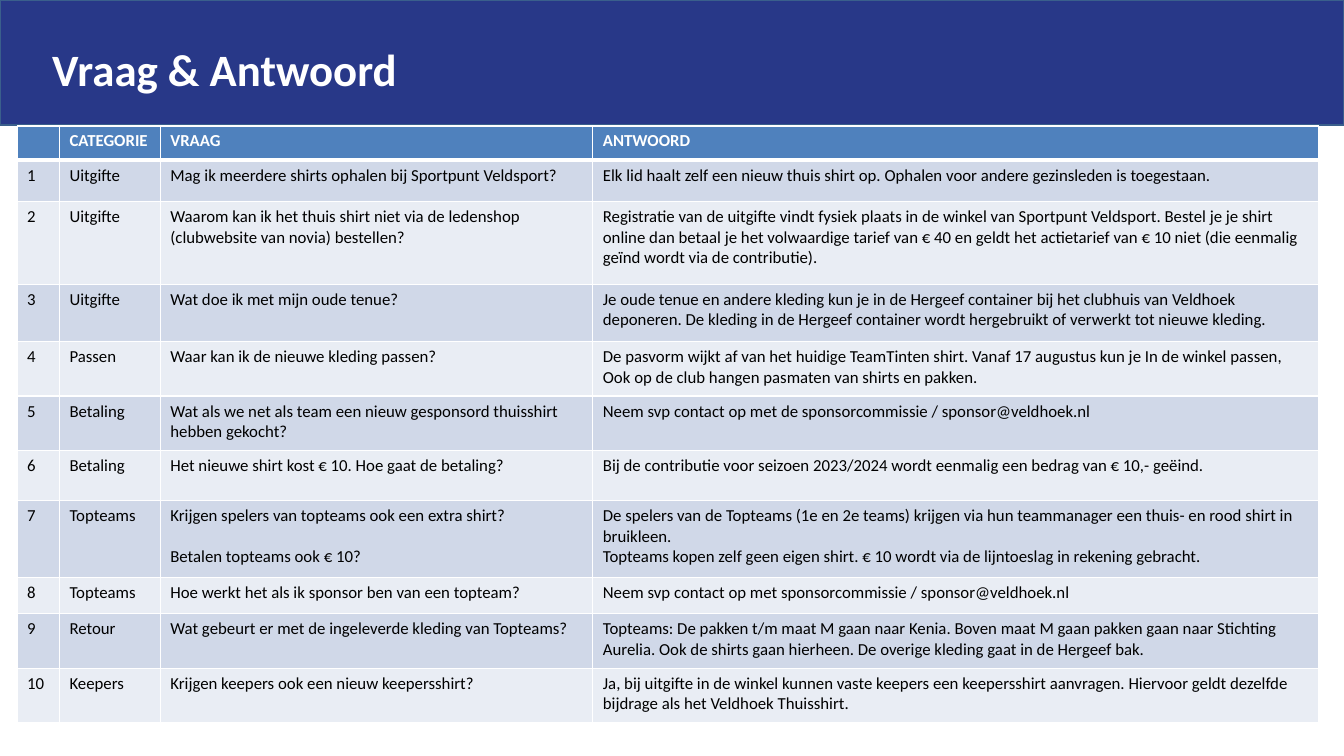
"""Build a slide with a title band and a table of questions and answers."""
from lxml.etree import SubElement
from pptx import Presentation
from pptx.dml.color import RGBColor
from pptx.enum.shapes import MSO_SHAPE
from pptx.enum.text import MSO_ANCHOR
from pptx.oxml.ns import qn
from pptx.util import Inches, Pt

NAVY = RGBColor(0x28, 0x38, 0x88)
EDGE = RGBColor(0x3A, 0x5F, 0x8C)
BLUE = RGBColor(0x4F, 0x81, 0xBD)
DARK = RGBColor(0xD0, 0xD8, 0xE8)
LIGHT = RGBColor(0xE9, 0xED, 0xF4)
WHITE = RGBColor(0xFF, 0xFF, 0xFF)
BLACK = RGBColor(0, 0, 0)
FONT = "Calibri"

WIDTHS = [0.42, 1, 4.29, 7.2]
HEIGHTS = [0.34, 0.41, 0.82, 0.57, 0.54, 0.54, 0.5, 0.76, 0.36, 0.54, 0.54]
HEAD = ("", "CATEGORIE", "VRAAG", "ANTWOORD")
ITEMS = [
    ("Uitgifte", "Mag ik meerdere shirts ophalen bij Sportpunt Veldsport?",
     "Elk lid haalt zelf een nieuw thuis shirt op. Ophalen voor andere "
     "gezinsleden is toegestaan."),
    ("Uitgifte", "Waarom kan ik het thuis shirt niet via de ledenshop "
     "(clubwebsite van novia) bestellen?",
     "Registratie van de uitgifte vindt fysiek plaats in de winkel van "
     "Sportpunt Veldsport. Bestel je je shirt online dan betaal je het "
     "volwaardige tarief van € 40 en geldt het actietarief van € 10 niet "
     "(die eenmalig geïnd wordt via de contributie)."),
    ("Uitgifte", "Wat doe ik met mijn oude tenue?",
     "Je oude tenue en andere kleding kun je in de Hergeef container bij "
     "het clubhuis van Veldhoek deponeren. De kleding in de Hergeef "
     "container wordt hergebruikt of verwerkt tot nieuwe kleding."),
    ("Passen", "Waar kan ik de nieuwe kleding passen?",
     "De pasvorm wijkt af van het huidige TeamTinten shirt. Vanaf 17 "
     "augustus kun je In de winkel passen, Ook op de club hangen pasmaten "
     "van shirts en pakken."),
    ("Betaling", "Wat als we net als team een nieuw gesponsord thuisshirt "
     "hebben gekocht?",
     "Neem svp contact op met de sponsorcommissie / sponsor@veldhoek.nl"),
    ("Betaling", "Het nieuwe shirt kost € 10. Hoe gaat de betaling?",
     "Bij de contributie voor seizoen 2023/2024 wordt eenmalig een bedrag "
     "van € 10,- geëind."),
    ("Topteams", "Krijgen spelers van topteams ook een extra shirt?\n"
     "Betalen topteams ook € 10?",
     "De spelers van de Topteams (1e en 2e teams) krijgen via hun "
     "teammanager een thuis- en rood shirt in bruikleen.\n"
     "Topteams kopen zelf geen eigen shirt. € 10 wordt via de lijntoeslag "
     "in rekening gebracht."),
    ("Topteams", "Hoe werkt het als ik sponsor ben van een topteam?",
     "Neem svp contact op met sponsorcommissie / sponsor@veldhoek.nl"),
    ("Retour", "Wat gebeurt er met de ingeleverde kleding van Topteams?",
     "Topteams: De pakken t/m maat M gaan naar Kenia. Boven maat M gaan "
     "pakken gaan naar Stichting Aurelia. Ook de shirts gaan hierheen. De "
     "overige kleding gaat in de Hergeef bak."),
    ("Keepers", "Krijgen keepers ook een nieuw keepersshirt?",
     "Ja, bij uitgifte in de winkel kunnen vaste keepers een keepersshirt "
     "aanvragen. Hiervoor geldt dezelfde bijdrage als het Veldhoek "
     "Thuisshirt."),
]


def style(frame, size, color, bold):
    """Format every run of a text frame."""
    for para in frame.paragraphs:
        for run in para.runs:
            font = run.font
            font.name, font.size, font.bold = FONT, Pt(size), bold
            font.color.rgb = color


def add_band(slide, left, top, width, height):
    """Draw the title band with its heading."""
    band = slide.shapes.add_shape(MSO_SHAPE.RECTANGLE, Inches(left),
                                  Inches(top), Inches(width), Inches(height))
    band.shadow.inherit = False
    band.fill.solid()
    band.fill.fore_color.rgb = NAVY
    band.line.color.rgb = EDGE
    band.line.width = Pt(2)
    title = slide.shapes.add_textbox(Inches(left + 0.42), Inches(top + 0.06),
                                     Inches(12), Inches(1.25))
    frame = title.text_frame
    frame.word_wrap = True
    frame.vertical_anchor = MSO_ANCHOR.MIDDLE
    frame.text = "Vraag & Antwoord"
    style(frame, 32, WHITE, True)


def set_edge(cell, side, width):
    """Give one side of a cell a white border."""
    props = cell._tc.get_or_add_tcPr()
    line = SubElement(props, qn(f"a:ln{side}"), w=str(Pt(width)))
    fill = SubElement(line, qn("a:solidFill"))
    SubElement(fill, qn("a:srgbClr"), val=str(WHITE))


def fill_cell(cell, text, row, col):
    """Write and format one cell according to its row and column."""
    for side in "LRTB":
        thick = (row, side) in ((0, "B"), (1, "T"))
        set_edge(cell, side, 3 if thick else 1)
    cell.fill.solid()
    cell.fill.fore_color.rgb = BLUE if row == 0 else DARK if row % 2 else LIGHT
    if not text:
        cell.margin_top = cell.margin_bottom = 0
        return
    frame = cell.text_frame
    frame.text = text
    style(frame, 12, BLACK if row else WHITE, row == 0)
    if col == 2:
        for para in frame.paragraphs[1:]:
            para.space_before = Pt(14.6)


def add_grid(slide, left, top):
    """Add the table of questions and answers."""
    rows = [HEAD] + [(str(num), *item) for num, item in enumerate(ITEMS, 1)]
    grid = slide.shapes.add_table(
        len(rows), len(WIDTHS), Inches(left), Inches(top),
        Inches(sum(WIDTHS)), Inches(sum(HEIGHTS))).table
    for col, width in enumerate(WIDTHS):
        grid.columns[col].width = Inches(width)
    for row, texts in enumerate(rows):
        grid.rows[row].height = Inches(HEIGHTS[row])
        for col, text in enumerate(texts):
            fill_cell(grid.cell(row, col), text, row, col)


def main():
    """Build and save the slide."""
    deck = Presentation()
    deck.slide_width, deck.slide_height = Inches(13.33), Inches(7.5)
    slide = deck.slides.add_slide(deck.slide_layouts[6])
    add_band(slide, 0, 0, 13.33, 1.24)
    add_grid(slide, 0.17, 1.25)
    deck.save("out.pptx")


if __name__ == "__main__":
    main()
